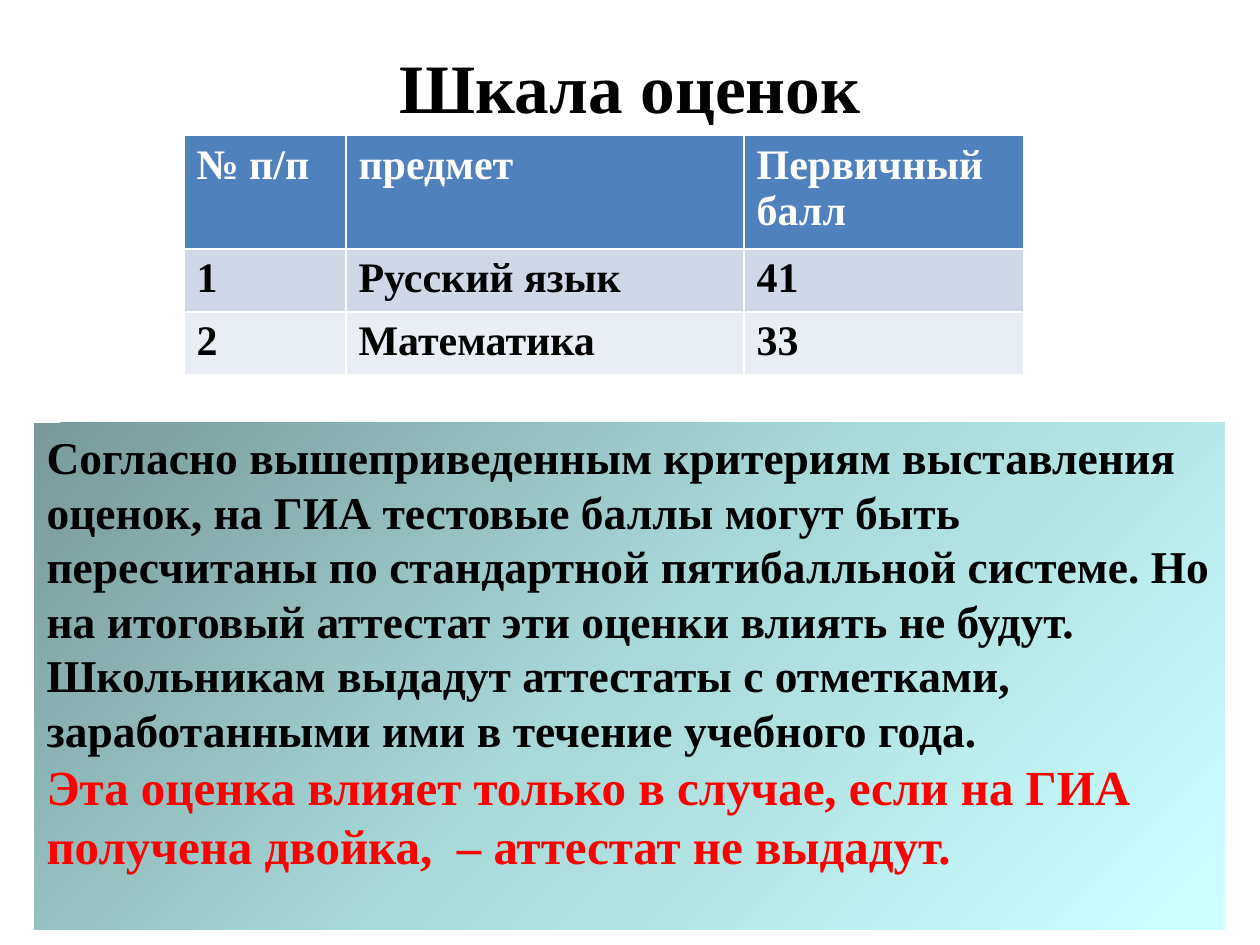
from lxml import etree
from pptx import Presentation
from pptx.dml.color import RGBColor
from pptx.enum import shapes, text
from pptx.oxml import parse_xml
from pptx.oxml.ns import nsdecls
from pptx.util import Pt

FONT = "Times New Roman"
HEADER = ["№ п/п", "предмет", "Первичный балл"]
ROWS = [["1", "Русский язык", "41"], ["2", "Математика", "33"]]
RULES = ("Согласно вышеприведенным критериям выставления оценок, на ГИА тестовые "
         "баллы могут быть пересчитаны по стандартной пятибалльной системе. Но на "
         "итоговый аттестат эти оценки влиять не будут. Школьникам выдадут аттестаты "
         "с отметками, заработанными ими в течение учебного года.")
WARNING = "Эта оценка влияет только в случае, если на ГИА получена двойка,  – аттестат не выдадут."


def rgb(value):
    return RGBColor.from_string(value)


def add_run(p, content, size=24, color="000000"):
    r = p.add_run()
    r.text = content
    r.font.name, r.font.size, r.font.bold = FONT, Pt(size), True
    r.font.color.rgb = rgb(color)


def add_title(s, box):
    tf = s.shapes.add_textbox(*map(Pt, box)).text_frame
    tf.word_wrap = True
    tf.vertical_anchor = text.MSO_ANCHOR.MIDDLE
    p = tf.paragraphs[0]
    p.alignment = text.PP_ALIGN.CENTER
    add_run(p, "Шкала оценок", 39.6)


def set_borders(cell, bottom):
    pr = cell._tc.get_or_add_tcPr()
    for i, (side, width) in enumerate([("L", 1), ("R", 1), ("T", 1), ("B", bottom)]):
        pr.insert(i, parse_xml(
            f'<a:ln{side} {nsdecls("a")} w="{Pt(width)}"><a:solidFill>'
            f'<a:srgbClr val="FFFFFF"/></a:solidFill></a:ln{side}>'))


def add_scores(s, box, widths, heights):
    table = s.shapes.add_table(len(heights), len(widths), *map(Pt, box)).table
    for col, width in zip(table.columns, widths):
        col.width = Pt(width)
    for row, height in zip(table.rows, heights):
        row.height = Pt(height)
    fills = ["4F81BD", "D0D8E8", "E9EDF4"]
    for i, (values, fill) in enumerate(zip([HEADER] + ROWS, fills)):
        for j, value in enumerate(values):
            cell = table.cell(i, j)
            cell.fill.solid()
            cell.fill.fore_color.rgb = rgb(fill)
            set_borders(cell, 1)
            add_run(cell.text_frame.paragraphs[0], value,
                    color="000000" if i else "FFFFFF")


def set_gradient(sp, colors):
    """Diagonal gradient with evenly spaced stops."""
    sp.fill.gradient()
    sp.fill.gradient_angle = 315
    stops = sp._element.spPr.find(".//{*}gsLst")
    for stop in list(stops):
        stops.remove(stop)
    for i, color in enumerate(colors):
        stop = etree.SubElement(stops, stops.tag.replace("gsLst", "gs"),
                                pos=str(100000 * i // (len(colors) - 1)))
        etree.SubElement(stop, stops.tag.replace("gsLst", "srgbClr"), val=color)


def add_note(s, box):
    sp = s.shapes.add_shape(shapes.MSO_SHAPE.RECTANGLE, *map(Pt, box))
    sp.shadow.inherit = False
    sp.line.fill.background()
    set_gradient(sp, ["779999", "A9DADA", "CCFFFF"])
    tf = sp.text_frame
    tf.word_wrap = True
    tf.vertical_anchor = text.MSO_ANCHOR.TOP
    p = tf.paragraphs[0]
    p.alignment = text.PP_ALIGN.LEFT
    add_run(p, RULES, 26)
    p.add_line_break()
    add_run(p, WARNING, 28, "FF0000")


def main():
    prs = Presentation()
    prs.slide_width, prs.slide_height = Pt(720), Pt(540)
    s = prs.slides.add_slide(prs.slide_layouts[6])
    # Title, explanation, then the table of scores
    add_title(s, (36, 21.6, 648, 55.4))
    add_note(s, (19.5, 241.6, 680.5, 289.4))
    add_scores(s, (105.1, 77.4, 480, 127), (92.6, 227.5, 159.9), (59.6, 33.7, 33.7))
    prs.save("out.pptx")


if __name__ == "__main__":
    main()
